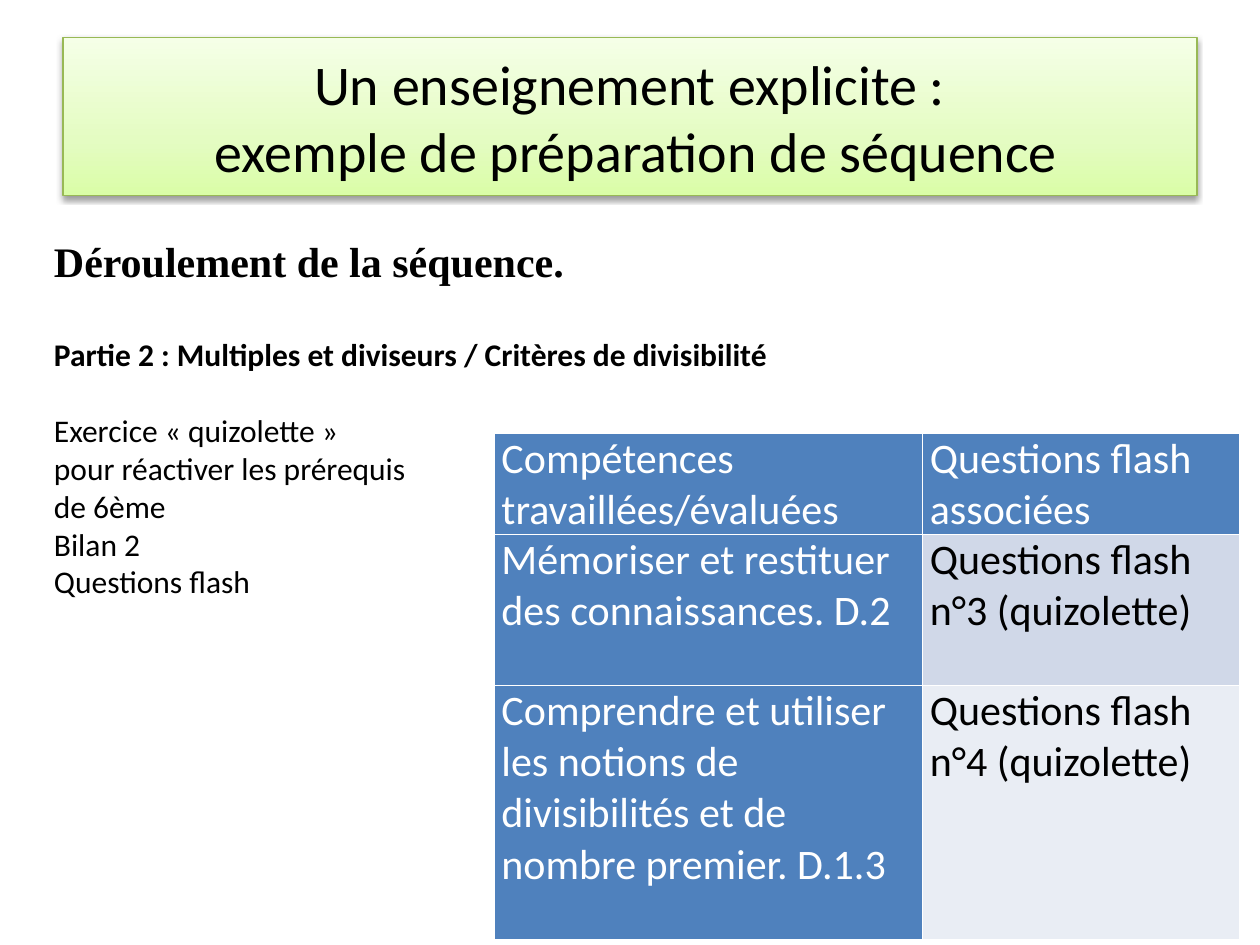
from copy import deepcopy

from lxml import etree
from pptx import Presentation
from pptx.dml.color import RGBColor
from pptx.enum.shapes import MSO_SHAPE
from pptx.enum.text import MSO_ANCHOR, MSO_AUTO_SIZE, PP_ALIGN
from pptx.oxml.ns import qn
from pptx.util import Inches, Pt

RECT = MSO_SHAPE.RECTANGLE
MIDDLE = MSO_ANCHOR.MIDDLE
CENTER = PP_ALIGN.CENTER
GROW = MSO_AUTO_SIZE.SHAPE_TO_FIT_TEXT
BLACK, WHITE, BLUE = "000000", "FFFFFF", "4F81BD"


def rgb(code):
    return RGBColor.from_string(code)


def style(para, size, color=BLACK, face="Calibri", bold=False):
    for run in para.runs:
        font = run.font
        font.size, font.name, font.bold = Pt(size), face, bold
        font.color.rgb = rgb(color)


prs = Presentation()
prs.slide_width, prs.slide_height = Inches(10), Inches(7.5)
slide = prs.slides.add_slide(prs.slide_layouts[6])

# Course outline
box = slide.shapes.add_textbox(Inches(0.33), Inches(1.82), Inches(6.66), Inches(3.03))
frame = box.text_frame
frame.word_wrap = True
frame.auto_size = GROW
frame.text = "\n".join([
    "Déroulement de la séquence.",
    "Partie 2 : Multiples et diviseurs / Critères de divisibilité",
    "Exercice « quizolette »",
    "pour réactiver les prérequis",
    "de 6ème",
    "Bilan 2",
    "Questions flash",
])
head, part, first, *rest = frame.paragraphs
style(head, 24, face="Times New Roman", bold=True)
style(part, 18, bold=True)
for para in [first, *rest]:
    style(para, 18)
part.space_before = Pt(28)
first.space_before = Pt(22)

# Skills table: each cell has its text, fill and font colour
rows = [
    [("Compétences travaillées/évaluées", BLUE, WHITE),
     ("Questions flash associées", BLUE, WHITE)],
    [("Mémoriser et restituer des connaissances. D.2", BLUE, WHITE),
     ("Questions flash n°3 (quizolette)", "D0D8E8", BLACK)],
    [("Comprendre et utiliser les notions de divisibilités et de nombre premier. D.1.3",
      BLUE, WHITE),
     ("Questions flash n°4 (quizolette)", "E9EDF4", BLACK)],
]
table = slide.shapes.add_table(
    3, 2, Inches(3.92), Inches(3.44), Inches(5.92), Inches(4.02)).table
for col, width in zip(table.columns, (3.4, 2.52)):
    col.width = Inches(width)
for row, height in zip(table.rows, (0.8, 1.2, 2.02)):
    row.height = Inches(height)
for r, row in enumerate(rows):
    for c, (text, fill, color) in enumerate(row):
        cell = table.cell(r, c)
        cell.margin_left = cell.margin_right = Inches(0.06)
        cell.margin_top = cell.margin_bottom = 0
        cell.text_frame.text = text
        style(cell.text_frame.paragraphs[0], 24, color)
        props = cell._tc.get_or_add_tcPr()
        for side in ("a:lnL", "a:lnR", "a:lnT", "a:lnB"):
            line = etree.SubElement(props, qn(side), w=str(Pt(1)))
            solid = etree.SubElement(line, qn("a:solidFill"))
            etree.SubElement(solid, qn("a:srgbClr"), val=WHITE)
        cell.fill.solid()
        cell.fill.fore_color.rgb = rgb(fill)

# Title banner with a green gradient and a soft shadow
title = slide.shapes.add_shape(RECT, Inches(0.5), Inches(0.3), Inches(9), Inches(1.25))
title.line.color.rgb = rgb("98B955")
title.line.width = Pt(0.75)
title.fill.gradient()
title.fill.gradient_angle = 90
stops = title._element.spPr.find(qn("a:gradFill")).find(qn("a:gsLst"))
stops.insert(1, deepcopy(stops[0]))
shades = [(0, "DAFDA7"), (0.35, "E4FCC2"), (1, "F5FFE7")]
for stop, (place, color) in zip(title.fill.gradient_stops, shades):
    stop.position = place
    stop.color.rgb = rgb(color)
title.shadow.inherit = False
effects = title._element.spPr.find(qn("a:effectLst"))
shadow = etree.SubElement(effects, qn("a:outerShdw"), blurRad=str(Pt(3.1)),
                          dist=str(Pt(1.6)), dir="5400000", rotWithShape="0")
tint = etree.SubElement(shadow, qn("a:srgbClr"), val=BLACK)
etree.SubElement(tint, qn("a:alpha"), val="38000")

frame = title.text_frame
frame.word_wrap = True
frame.vertical_anchor = MIDDLE
para = frame.paragraphs[0]
para.alignment = CENTER
para.text = "Un enseignement explicite :\v exemple de préparation de séquence"
style(para, 32)

prs.save("out.pptx")
